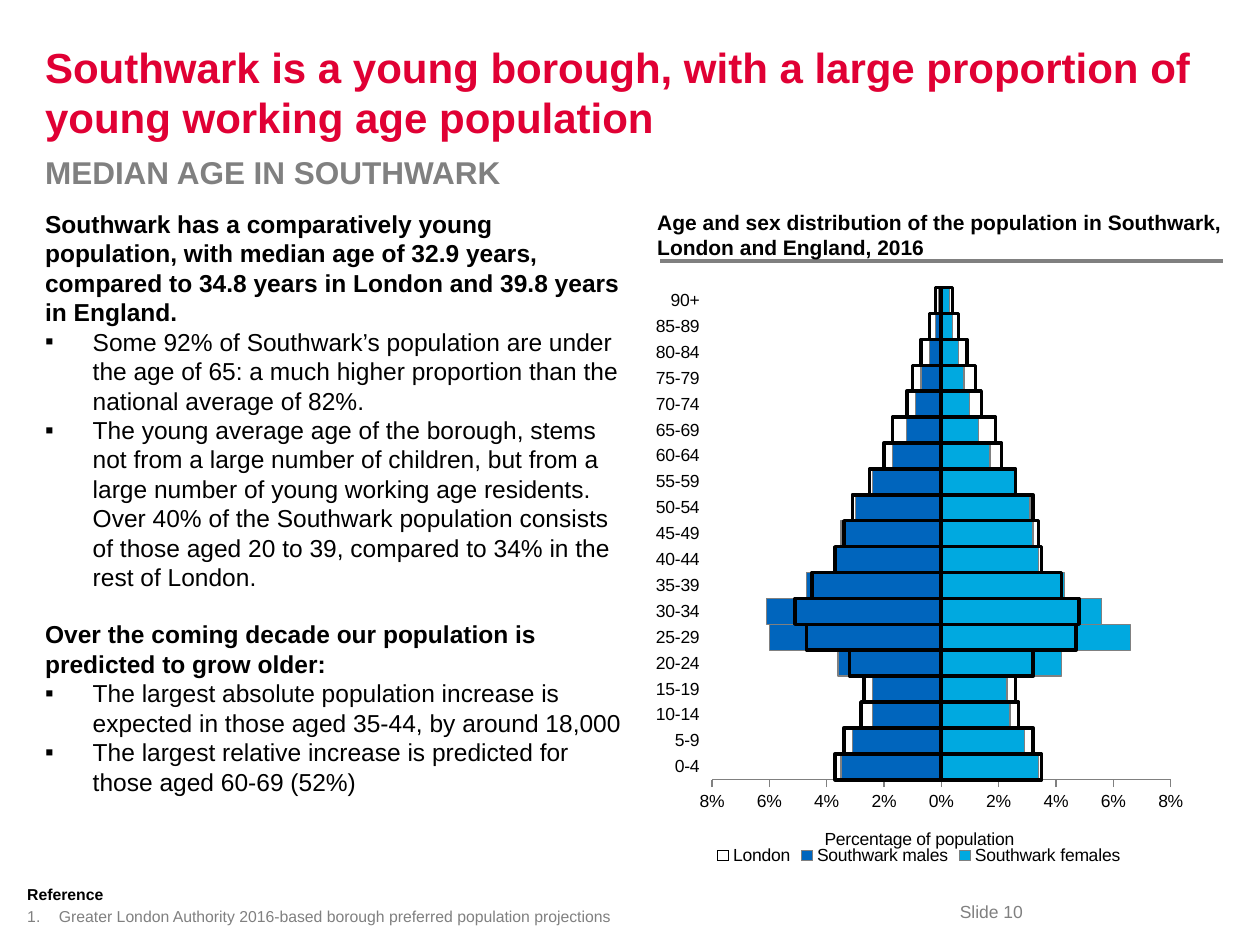
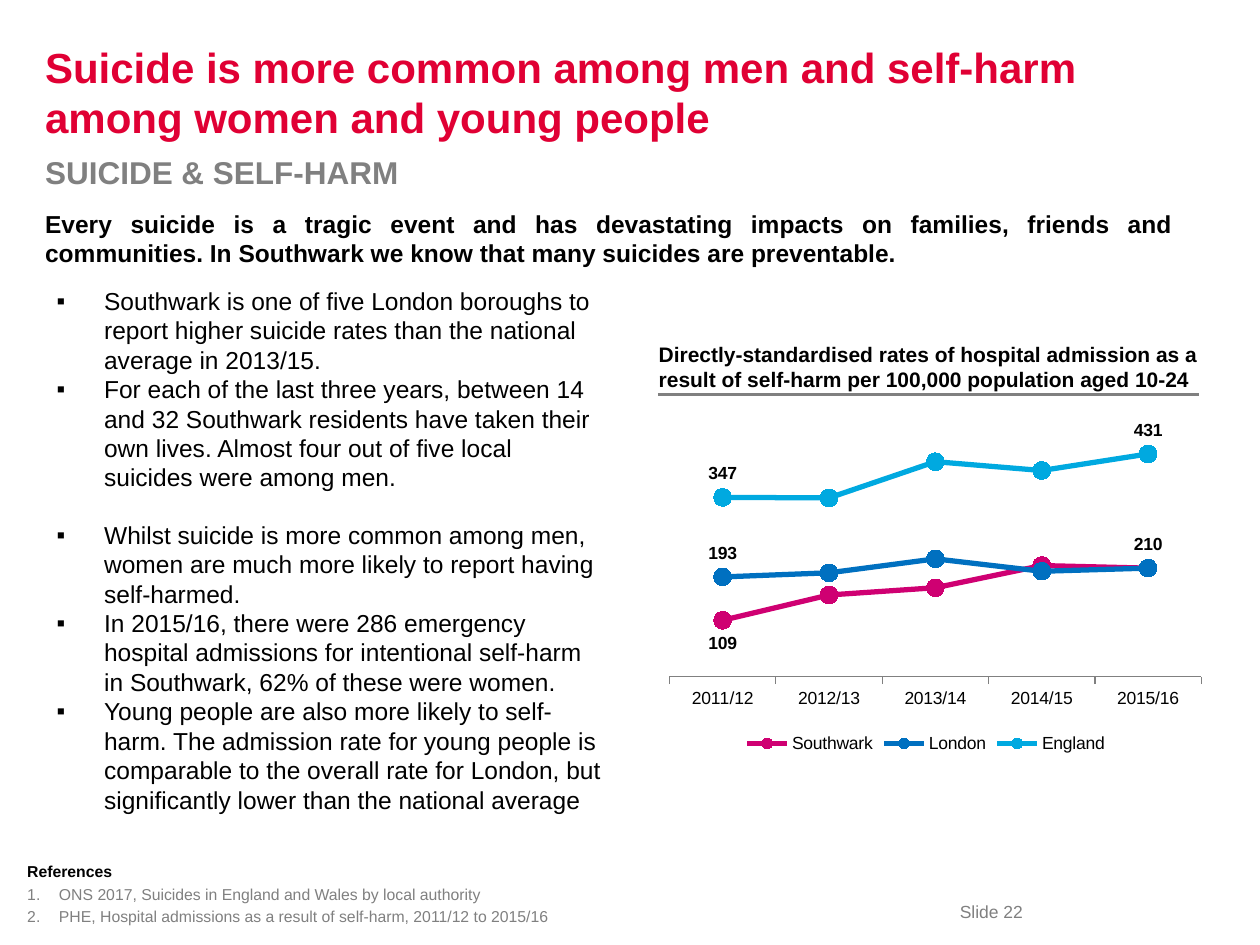
"""Build two Southwark health slides: population by age, and suicide and self-harm."""
from lxml.etree import SubElement
from pptx import Presentation
from pptx.chart.data import CategoryChartData
from pptx.dml.color import RGBColor
from pptx.enum.chart import XL_CHART_TYPE as ChartType
from pptx.enum.chart import XL_LABEL_POSITION as LabelPosition
from pptx.enum.chart import XL_LEGEND_POSITION as LegendPosition
from pptx.enum.chart import XL_MARKER_STYLE as MarkerStyle
from pptx.enum.chart import XL_TICK_LABEL_POSITION as TickLabels
from pptx.enum.chart import XL_TICK_MARK as TickMark
from pptx.enum.shapes import MSO_CONNECTOR as Connector
from pptx.enum.text import MSO_ANCHOR as Anchor
from pptx.enum.text import PP_ALIGN as Align
from pptx.oxml import parse_xml
from pptx.oxml.ns import nsdecls, qn
from pptx.util import Cm, Pt

RED = RGBColor(0xE0, 0x00, 0x34)
GREY = RGBColor(0x80, 0x80, 0x80)
BLACK = RGBColor(0x00, 0x00, 0x00)
WHITE = RGBColor(0xFF, 0xFF, 0xFF)
SKY = RGBColor(0x00, 0xA9, 0xE0)
BLUE = RGBColor(0x00, 0x65, 0xBD)
LONDON_BLUE = RGBColor(0x00, 0x70, 0xC0)
MAGENTA = RGBColor(0xCF, 0x00, 0x72)
FONT = "Arial"

TITLE = {"size": Pt(24), "bold": True, "color": RED}
SUBTITLE = {"size": Pt(18), "bold": True, "color": GREY}
LEAD = {"size": Pt(14), "bold": True, "color": BLACK}
BODY = {"size": Pt(14), "bold": False, "color": BLACK, "bullet": "▪", "indent": Cm(0.96)}
CHART_TITLE = {"size": Pt(12), "bold": True, "color": BLACK}
REFERENCE_HEAD = {"size": Pt(9), "bold": True, "color": BLACK}
REFERENCE = {"size": Pt(9), "bold": False, "color": GREY, "number": True,
             "indent": Cm(0.64), "space_before": Pt(1.8)}
FOOTER = {"size": Pt(10), "color": GREY}
GAP = {"space_before": Pt(16)}
JUSTIFIED = {"alignment": Align.JUSTIFY}


def add_text(slide, box, paragraphs, anchor=Anchor.TOP, wrap=True):
    frame = slide.shapes.add_textbox(*map(Cm, box)).text_frame
    frame.word_wrap = wrap
    frame.vertical_anchor = anchor
    for index, (text, style) in enumerate(paragraphs):
        paragraph = frame.add_paragraph() if index else frame.paragraphs[0]
        if "indent" in style:
            properties = paragraph._p.get_or_add_pPr()
            properties.set("marL", str(style["indent"]))
            properties.set("indent", str(-style["indent"]))
            if "number" in style:
                SubElement(properties, qn("a:buAutoNum"), type="arabicPeriod")
            else:
                SubElement(properties, qn("a:buFont"), typeface=FONT)
                SubElement(properties, qn("a:buChar"), char=style["bullet"])
        run = paragraph.add_run()
        run.text = text
        run.font.name = FONT
        run.font.color.rgb = style["color"]
        for name, value in style.items():
            if name in ("size", "bold"):
                setattr(run.font, name, value)
            elif name in ("space_before", "alignment"):
                setattr(paragraph, name, value)


def add_chart(slide, kind, box, data, plot_area):
    chart = slide.shapes.add_chart(kind, *map(Cm, box), data).chart
    chart.has_title = False
    chart.font.name = FONT
    chart.font.size = Pt(10)
    chart.font.color.rgb = BLACK
    chart.has_legend = True
    chart.legend.position = LegendPosition.BOTTOM
    chart.legend.include_in_layout = False
    chart.plots[0].vary_by_categories = False
    chart.value_axis.has_major_gridlines = False
    for axis in (chart.category_axis, chart.value_axis):
        axis.major_tick_mark = TickMark.OUTSIDE
        axis.minor_tick_mark = TickMark.NONE
        axis.format.line.color.rgb = GREY
    area = chart._chartSpace.chart.plotArea
    for layout in area.findall(qn("c:layout")):
        area.remove(layout)
    sizes = "".join(f'<c:{tag} val="{value}"/>' for tag, value in zip("xywh", plot_area))
    area.insert(0, parse_xml(
        f'<c:layout {nsdecls("c")}><c:manualLayout><c:layoutTarget val="inner"/>'
        f'<c:xMode val="edge"/><c:yMode val="edge"/>{sizes}</c:manualLayout></c:layout>'))
    return chart


pages = [
    {
        "footer": "Slide 10",
        "title": "Southwark is a young borough, with a large proportion of young working age population",
        "subtitle": "MEDIAN AGE IN SOUTHWARK",
        "texts": [((0.66, 4.09, 12.24, 13.06), [
            ("Southwark has a comparatively young population, with median age of 32.9 years, "
             "compared to 34.8 years in London and 39.8 years in England.", LEAD),
            ("Some 92% of Southwark’s population are under the age of 65: a much higher "
             "proportion than the national average of 82%.", BODY),
            ("The young average age of the borough, stems not from a large number of children, "
             "but from a large number of young working age residents. Over 40% of the Southwark "
             "population consists of those aged 20 to 39, compared to 34% in the rest of London.",
             BODY),
            ("Over the coming decade our population is predicted to grow older:", LEAD | GAP),
            ("The largest absolute population increase is expected in those aged 35-44, "
             "by around 18,000", BODY),
            ("The largest relative increase is predicted for those aged 60-69 (52%)", BODY),
        ])],
        "references": ("Reference", [
            "Greater London Authority 2016-based borough preferred population projections"]),
        "chart_title": ("Age and sex distribution of the population in Southwark, London and "
                        "England, 2016", (13, 4.09, 12.2, 1.27)),
        "rule": (13.31, 24.66, 5.26),
    },
    {
        "footer": "Slide 22",
        "title": "Suicide is more common among men and self-harm among women and young people",
        "subtitle": "SUICIDE & SELF-HARM",
        "texts": [
            ((0.66, 4.09, 23.24, 3.3), [
                ("Every suicide is a tragic event and has devastating impacts on families, "
                 "friends and communities. In Southwark we know that many suicides are "
                 "preventable.", LEAD | JUSTIFIED)]),
            ((0.89, 5.64, 11.51, 11.02), [
                ("Southwark is one of five London boroughs to report higher suicide rates than "
                 "the national average in 2013/15.", BODY),
                ("For each of the last three years, between 14 and 32 Southwark residents have "
                 "taken their own lives. Almost four out of five local suicides were among men.",
                 BODY),
                ("Whilst suicide is more common among men, women are much more likely to report "
                 "having self-harmed.", BODY | GAP),
                ("In 2015/16, there were 286 emergency hospital admissions for intentional "
                 "self-harm in Southwark, 62% of these were women.", BODY),
                ("Young people are also more likely to self-harm. The admission rate for young "
                 "people is comparable to the overall rate for London, but significantly lower "
                 "than the national average", BODY),
            ]),
        ],
        "references": ("References", [
            "ONS 2017, Suicides in England and Wales by local authority",
            "PHE, Hospital admissions as a result of self-harm, 2011/12 to 2015/16"]),
        "chart_title": ("Directly-standardised rates of hospital admission as a result of "
                        "self-harm per 100,000 population aged 10-24", (13.03, 6.76, 11.48, 1.27)),
        "rule": (13.26, 24.18, 7.95),
    },
]

presentation = Presentation()
presentation.slide_width, presentation.slide_height = Cm(25.4), Cm(19.05)

for page in pages:
    slide = presentation.slides.add_slide(presentation.slide_layouts[6])
    add_text(slide, (19.1, 18.03, 1.83, 0.69), [(page["footer"], FOOTER)], wrap=False)
    add_text(slide, (0.66, 0.53, 23.7, 2.64), [(page["title"], TITLE)], Anchor.MIDDLE)
    add_text(slide, (0.66, 2.97, 12.24, 1.02), [(page["subtitle"], SUBTITLE)])
    for box, paragraphs in page["texts"]:
        add_text(slide, box, paragraphs)
    heading, sources = page["references"]
    height = 0.62 + 0.47 * len(sources)
    add_text(slide, (0.3, 18.78 - height, 18.16, height),
             [(heading, REFERENCE_HEAD)] + [(source, REFERENCE) for source in sources],
             Anchor.BOTTOM)
    left, right, top = page["rule"]
    rule = slide.shapes.add_connector(Connector.STRAIGHT, Cm(left), Cm(top), Cm(right), Cm(top))
    rule.line.color.rgb = GREY
    rule.line.width = Pt(2)
    SubElement(rule._element.spPr, qn("a:effectLst"))
    text, box = page["chart_title"]
    add_text(slide, box, [(text, CHART_TITLE)])

population_slide, self_harm_slide = presentation.slides

age_series = [
    ("Southwark females", SKY, GREY, 0.75,
     [3.4, 2.9, 2.4, 2.3, 4.2, 6.6, 5.6, 4.3, 3.4, 3.2, 3.1, 2.6, 1.7, 1.3, 1, 0.8, 0.6, 0.4, 0.3]),
    ("Southwark males", BLUE, GREY, 0.75,
     [-3.5, -3.1, -2.4, -2.4, -3.6, -6, -6.1, -4.7, -3.7, -3.5, -3, -2.4, -1.7, -1.2, -0.9, -0.7,
      -0.4, -0.2, -0.1]),
    ("London", None, BLACK, 2,
     [-3.7, -3.4, -2.8, -2.7, -3.2, -4.7, -5.1, -4.5, -3.7, -3.4, -3.1, -2.5, -2, -1.7, -1.2, -1,
      -0.7, -0.4, -0.2]),
    ("London females", None, BLACK, 2,
     [3.5, 3.2, 2.7, 2.6, 3.2, 4.7, 4.8, 4.2, 3.5, 3.4, 3.2, 2.6, 2.1, 1.9, 1.4, 1.2, 0.9, 0.6, 0.4]),
]
age_data = CategoryChartData(number_format="0.0%")
age_data.categories = [f"{age}-{age + 4}" for age in range(0, 90, 5)] + ["90+"]
for name, fill, outline, width, percentages in age_series:
    age_data.add_series(name, [round(value / 100, 3) for value in percentages])
pyramid = add_chart(population_slide, ChartType.BAR_CLUSTERED, (12.9, 5.36, 11.25, 12.19),
                    age_data, (0.129, 0.036, 0.822, 0.814))
pyramid.plots[0].gap_width = 0
pyramid.plots[0].overlap = 100
for series, (name, fill, outline, width, percentages) in zip(pyramid.plots[0].series, age_series):
    if fill is None:
        series.format.fill.background()
    else:
        series.format.fill.solid()
        series.format.fill.fore_color.rgb = fill
    series.format.line.color.rgb = outline
    series.format.line.width = Pt(width)
pyramid.category_axis.tick_label_position = TickLabels.LOW
pyramid.category_axis.major_tick_mark = TickMark.NONE
pyramid.category_axis.format.line.fill.background()
percent_axis = pyramid.value_axis
for name, value in {"minimum_scale": -0.08, "maximum_scale": 0.08, "major_unit": 0.02}.items():
    setattr(percent_axis, name, value)
percent_axis.tick_labels.number_format = "0%;0%;0%"
percent_axis.tick_labels.number_format_is_linked = False
percent_axis.axis_title.text_frame.text = "Percentage of population"
axis_font = percent_axis.axis_title.text_frame.paragraphs[0].runs[0].font
for name, value in {"name": FONT, "size": Pt(10), "bold": False}.items():
    setattr(axis_font, name, value)
pyramid.legend._element.insert(1, parse_xml(
    f'<c:legendEntry {nsdecls("c")}><c:idx val="0"/><c:delete val="1"/></c:legendEntry>'))

rate_series = [
    ("Southwark", MAGENTA, [109, 158, 172, 215, 210],
     {0: LabelPosition.BELOW, 4: LabelPosition.ABOVE}),
    ("London", LONDON_BLUE, [193, 201, 228, 204, 210], {0: LabelPosition.ABOVE}),
    ("England", SKY, [347, 346, 416, 399, 431],
     {0: LabelPosition.ABOVE, 4: LabelPosition.ABOVE}),
]
rate_data = CategoryChartData(number_format="0")
rate_data.categories = [f"{year}/{year - 1999}" for year in range(2011, 2016)]
for name, color, rates, labels in rate_series:
    rate_data.add_series(name, rates)
rates_chart = add_chart(self_harm_slide, ChartType.LINE_MARKERS, (12.83, 8.28, 11.68, 7.01),
                        rate_data, (0.057, 0.022, 0.918, 0.743))
rates_chart.value_axis.minimum_scale = 0
rates_chart.value_axis.maximum_scale = 500
rates_chart.value_axis.visible = False
for series, (name, color, rates, labels) in zip(rates_chart.plots[0].series, rate_series):
    series.smooth = False
    series.format.line.color.rgb = color
    series.format.line.width = Pt(3)
    series.marker.style = MarkerStyle.CIRCLE
    series.marker.size = 10
    series.marker.format.fill.solid()
    series.marker.format.fill.fore_color.rgb = color
    series.marker.format.line.color.rgb = WHITE
    series.data_labels.show_value = False
    for index, position in labels.items():
        label = series.points[index].data_label
        for name, value in {"name": FONT, "size": Pt(10), "bold": True}.items():
            setattr(label.font, name, value)
        label.position = position

presentation.save("out.pptx")
